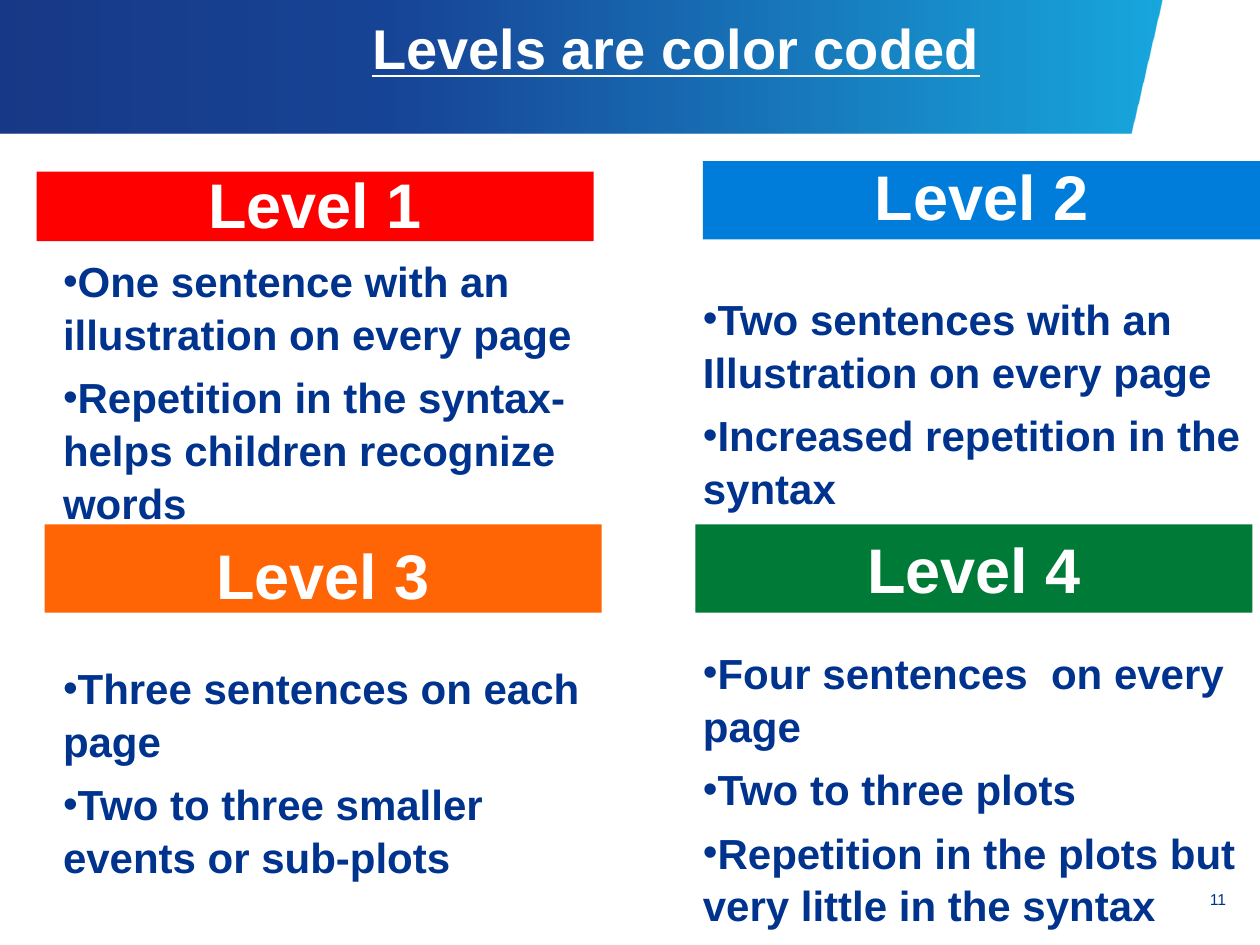
"""Build the slide that explains the four colour-coded reading levels."""
import lxml.etree
import pptx
import pptx.dml.color
import pptx.enum.shapes
import pptx.enum.text
import pptx.oxml.ns
import pptx.util

Cm, Pt = pptx.util.Cm, pptx.util.Pt
ALIGN, ANCHOR = pptx.enum.text.PP_ALIGN, pptx.enum.text.MSO_ANCHOR
qn = pptx.oxml.ns.qn

WHITE, NAVY = "FFFFFF", "00338D"
TITLE = "Levels are color coded"
PAGE_NUMBER = "11"
BANNER_POINTS = [(23.44, 0), (0, 0), (0, 2.69), (22.81, 2.69)]
BANNER_STOPS = [(0, "00257A"), (35, NAVY), (100, "009FDA")]
BANNER_OPACITY = 90

HEADING_WIDTH = 11.23
HEADINGS = [
    {"text": "Level 1", "color": "FF0000", "placeholder": 1, "left": 0.74, "top": 3.46, "height": 1.4, "inset": 0},
    {"text": "Level 2", "color": "007DDA", "placeholder": None, "left": 14.17, "top": 3.25, "height": 1.58, "inset": 0.13},
    {"text": "Level 3", "color": "FF6405", "placeholder": 3, "left": 0.9, "top": 10.57, "height": 1.78, "inset": 0},
    {"text": "Level 4", "color": "007A37", "placeholder": None, "left": 14.02, "top": 10.57, "height": 1.78, "inset": 0.13},
]
COLUMNS = [
    {"placeholder": 2, "left": 1.27, "top": 5.1, "height": 13.2, "groups": [
        ["One sentence with an illustration on every page",
         "Repetition in the syntax-helps children recognize words"],
        ["Three sentences on each page",
         "Two to three smaller events or sub-plots"]]},
    {"placeholder": 4, "left": 14.17, "top": 5.86, "height": 13.19, "groups": [
        ["Two sentences with an Illustration on every page",
         "Increased repetition in the syntax"],
        ["Four sentences  on every page",
         "Two to three plots",
         "Repetition in the plots but very little in the syntax"]]},
]
ITEM_GAP, GROUP_GAP = 6, 75.5


def rgb(color):
    return pptx.dml.color.RGBColor.from_string(color)


def apply(target, values):
    for name, value in values.items():
        setattr(target, name, value)


def place(shape, left, top, width, height):
    apply(shape, {"left": Cm(left), "top": Cm(top), "width": Cm(width), "height": Cm(height)})


def set_frame(shape, anchor, left=0, top=0, right=0, bottom=0):
    apply(shape.text_frame, {
        "word_wrap": True, "auto_size": pptx.enum.text.MSO_AUTO_SIZE.NONE, "vertical_anchor": anchor,
        "margin_left": Cm(left), "margin_top": Cm(top), "margin_right": Cm(right), "margin_bottom": Cm(bottom)})


def write(paragraph, text, size, color, alignment, before=0, spacing=1.0, bold=True, underline=False):
    apply(paragraph, {"alignment": alignment, "space_before": Pt(before), "line_spacing": spacing})
    run = paragraph.add_run()
    run.text = text
    apply(run.font, {"name": "Arial", "size": Pt(size), "bold": bold, "underline": underline})
    run.font.color.rgb = rgb(color)


def add_bullet(paragraph):
    properties = paragraph._p.get_or_add_pPr()
    properties.set("marL", "0")
    properties.set("indent", "0")
    lxml.etree.SubElement(properties, qn("a:buChar")).set("char", "•")


def add_banner(slide):
    points = [(Cm(x), Cm(y)) for x, y in BANNER_POINTS]
    builder = slide.shapes.build_freeform(*points[0])
    builder.add_line_segments(points[1:])
    banner = builder.convert_to_shape()
    banner.shadow.inherit = False
    banner.line.fill.background()
    banner.fill.gradient()
    banner.fill.gradient_angle = 0
    stops = banner._element.spPr.find(qn("a:gradFill")).find(qn("a:gsLst"))
    for stop in list(stops):
        stops.remove(stop)
    for position, color in BANNER_STOPS:
        stop = lxml.etree.SubElement(stops, qn("a:gs"), pos=str(position * 1000))
        color_element = lxml.etree.SubElement(stop, qn("a:srgbClr"), val=color)
        lxml.etree.SubElement(color_element, qn("a:alpha"), val=str(BANNER_OPACITY * 1000))
    slide.shapes._spTree.insert(2, banner._element)


def add_title(slide):
    title = slide.shapes.title
    place(title, 3.3, 0.08, 18.21, 2.39)
    set_frame(title, ANCHOR.TOP, left=2.69, top=0.2, right=0.25)
    write(title.text_frame.paragraphs[0], TITLE, 32, WHITE, ALIGN.CENTER, underline=True)


def add_column(slide, column):
    body = slide.placeholders[column["placeholder"]]
    place(body, column["left"], column["top"], HEADING_WIDTH, column["height"])
    set_frame(body, ANCHOR.TOP)
    paragraph = body.text_frame.paragraphs[0]
    for group_index, group in enumerate(column["groups"]):
        for item_index, item in enumerate(group):
            before = ITEM_GAP if item_index else GROUP_GAP if group_index else 0
            if before:
                paragraph = body.text_frame.add_paragraph()
            add_bullet(paragraph)
            write(paragraph, item, 24, NAVY, ALIGN.LEFT, before, 1.05)


def add_heading(slide, heading):
    if heading["placeholder"]:
        shape = slide.placeholders[heading["placeholder"]]
    else:
        shape = slide.shapes.add_shape(pptx.enum.shapes.MSO_SHAPE.RECTANGLE, 0, 0, 0, 0)
        shape.shadow.inherit = False
    place(shape, heading["left"], heading["top"], HEADING_WIDTH, heading["height"])
    shape.fill.solid()
    shape.fill.fore_color.rgb = rgb(heading["color"])
    shape.line.fill.background()
    set_frame(shape, ANCHOR.BOTTOM, bottom=heading["inset"])
    write(shape.text_frame.paragraphs[0], heading["text"], 36, WHITE, ALIGN.CENTER)


def add_page_number(slide):
    box = slide.shapes.add_textbox(Cm(23.42), Cm(17.73), Cm(1.3), Cm(0.79))
    set_frame(box, ANCHOR.TOP, left=0.2, top=0.2)
    write(box.text_frame.paragraphs[0], PAGE_NUMBER, 9, NAVY, ALIGN.RIGHT, bold=False)


def main():
    presentation = pptx.Presentation()
    apply(presentation, {"slide_width": Cm(25.4), "slide_height": Cm(19.05)})
    slide = presentation.slides.add_slide(presentation.slide_layouts.get_by_name("Comparison"))
    add_banner(slide)
    add_title(slide)
    for column in COLUMNS:
        add_column(slide, column)
    for heading in HEADINGS:
        add_heading(slide, heading)
    add_page_number(slide)
    presentation.save("out.pptx")


if __name__ == "__main__":
    main()
